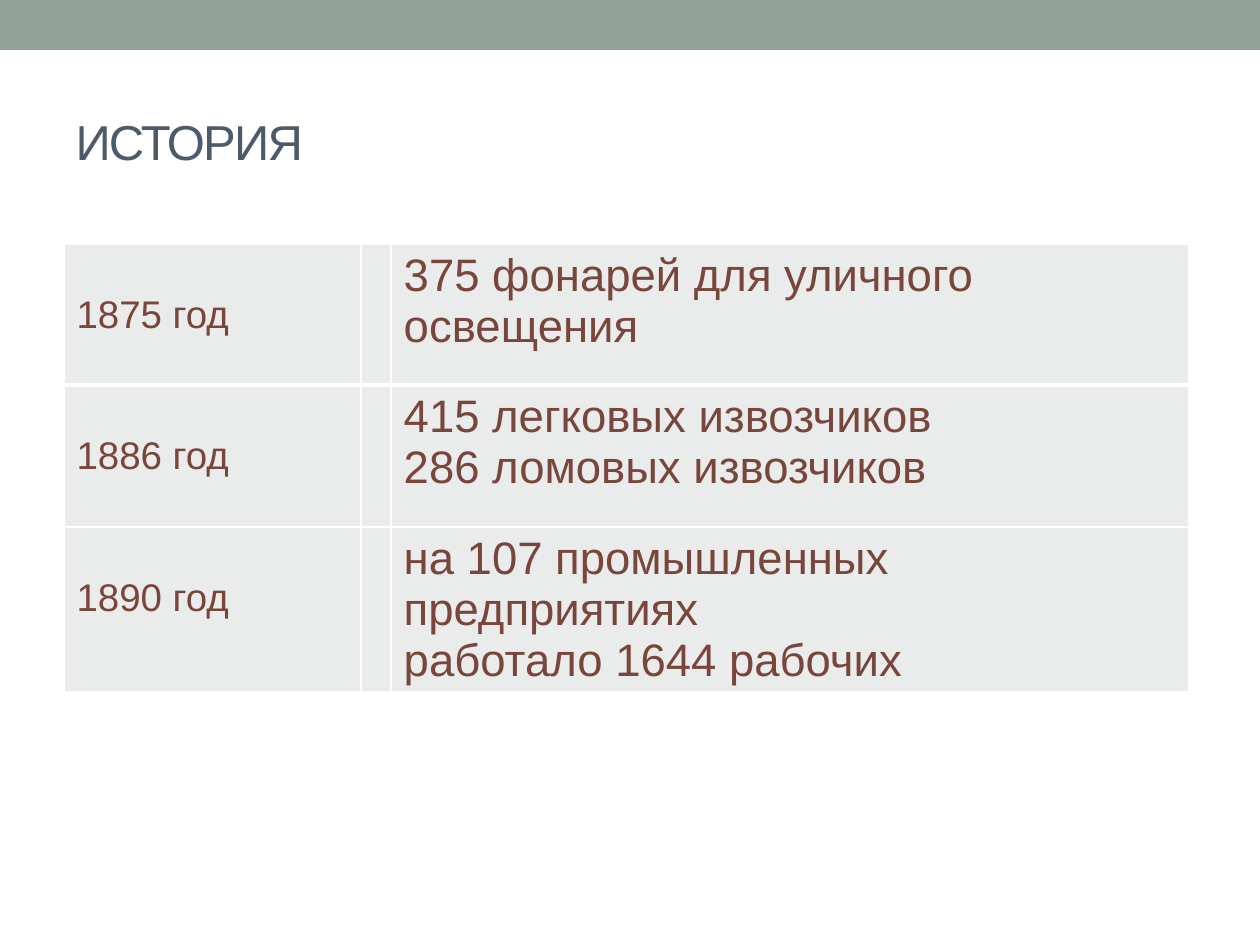
from lxml.etree import SubElement
from pptx import Presentation
from pptx.dml.color import RGBColor
from pptx.enum.shapes import MSO_SHAPE
from pptx.enum.text import MSO_ANCHOR, PP_ALIGN
from pptx.oxml.ns import qn
from pptx.util import Pt

PX = 914400 / 126
FONT = "Arial"
SAGE = RGBColor(0x93, 0xA2, 0x99)
SLATE = RGBColor(0x4C, 0x5A, 0x6A)
BROWN = RGBColor(0x79, 0x46, 0x3D)
PALE = RGBColor(0xE9, 0xEC, 0xEB)
WHITE = RGBColor(0xFF, 0xFF, 0xFF)

COLUMN_WIDTHS = (297, 30, 798)
ROW_HEIGHTS = (141, 142, 164)
YEAR_TOP_MARGIN = 50
# Each event is a list of paragraphs, each paragraph a list of lines
HISTORY = [
    ("1875 год", [["375 фонарей для уличного освещения"]]),
    ("1886 год", [["415 легковых извозчиков"], ["286 ломовых извозчиков"]]),
    ("1890 год", [["на 107 промышленных предприятиях ", "работало 1644 рабочих"]]),
]


def px(length):
    return round(length * PX)


def add_run(paragraph, text, size, color):
    run = paragraph.add_run()
    run.text = text
    run.font.name = FONT
    run.font.size = Pt(size)
    run.font.color.rgb = color
    return run


def set_borders(cell, top, bottom):
    properties = cell._tc.get_or_add_tcPr()
    widths = {"a:lnL": 1, "a:lnR": 1, "a:lnT": top, "a:lnB": bottom}
    for index, (side, width) in enumerate(widths.items()):
        line = properties.makeelement(qn(side), {"w": str(Pt(width))})
        fill = SubElement(line, qn("a:solidFill"))
        SubElement(fill, qn("a:srgbClr"), val=str(WHITE))
        properties.insert(index, line)


def add_top_band(slide, left, top, width, height):
    band = slide.shapes.add_shape(
        MSO_SHAPE.RECTANGLE, px(left), px(top), px(width), px(height))
    band.shadow.inherit = False
    band.fill.solid()
    band.fill.fore_color.rgb = SAGE
    band.line.fill.background()


def place_title(slide, left, top, width, height):
    title = slide.shapes.title
    title.left, title.top = px(left), px(top)
    title.width, title.height = px(width), px(height)
    title.text_frame.vertical_anchor = MSO_ANCHOR.MIDDLE
    heading = title.text_frame.paragraphs[0]
    heading.alignment = PP_ALIGN.LEFT
    run = add_run(heading, "ИСТОРИЯ", 28, SLATE)
    run.font._element.set("spc", "-100")


def fill_event(cell, paragraphs):
    frame = cell.text_frame
    for index, lines in enumerate(paragraphs):
        paragraph = frame.add_paragraph() if index else frame.paragraphs[0]
        for number, line in enumerate(lines):
            if number:
                paragraph.add_line_break()
            add_run(paragraph, line, 26, BROWN)


def add_history_table(slide, left, top):
    table = slide.shapes.add_table(
        len(ROW_HEIGHTS), len(COLUMN_WIDTHS), px(left), px(top),
        px(sum(COLUMN_WIDTHS)), px(sum(ROW_HEIGHTS))).table
    table.first_row = table.horz_banding = False
    for column, width in zip(table.columns, COLUMN_WIDTHS):
        column.width = px(width)

    for index, (year, event) in enumerate(HISTORY):
        row = table.rows[index]
        row.height = px(ROW_HEIGHTS[index])
        for cell in row.cells:
            cell.fill.solid()
            cell.fill.fore_color.rgb = PALE
            # A thick rule separates the first row from the second
            set_borders(cell, 3 if index == 1 else 1, 3 if index == 0 else 1)
        year_cell, _, event_cell = row.cells
        year_cell.margin_top = px(YEAR_TOP_MARGIN)
        add_run(year_cell.text_frame.paragraphs[0], year, 22, BROWN)
        fill_event(event_cell, event)


def main():
    presentation = Presentation()
    presentation.slide_width, presentation.slide_height = px(1260), px(945)
    slide = presentation.slides.add_slide(presentation.slide_layouts[5])
    add_top_band(slide, 0, 0, 1260, 50)
    place_title(slide, 63, 73, 1134, 136)
    add_history_table(slide, 64, 244)
    presentation.save("out.pptx")


if __name__ == "__main__":
    main()
